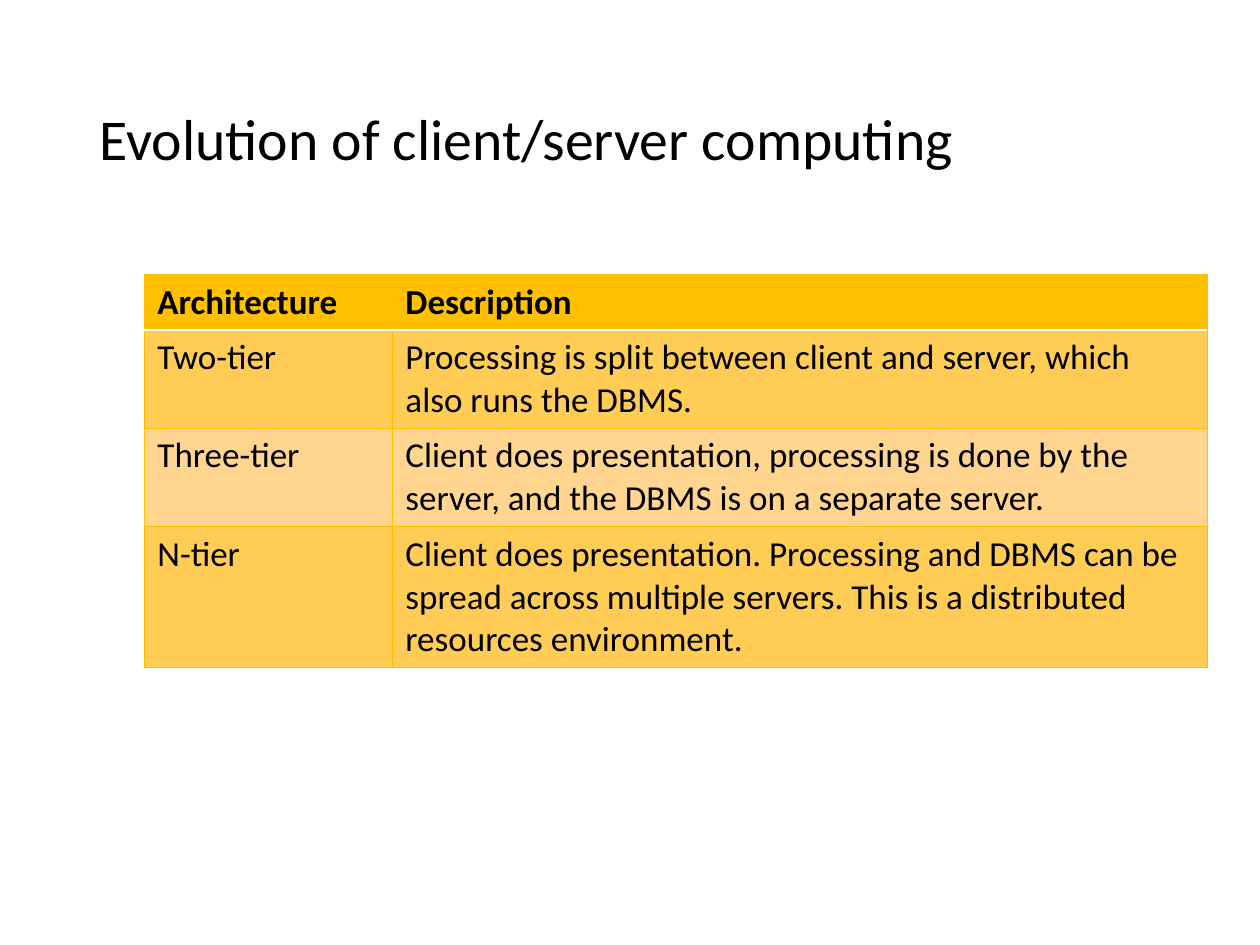
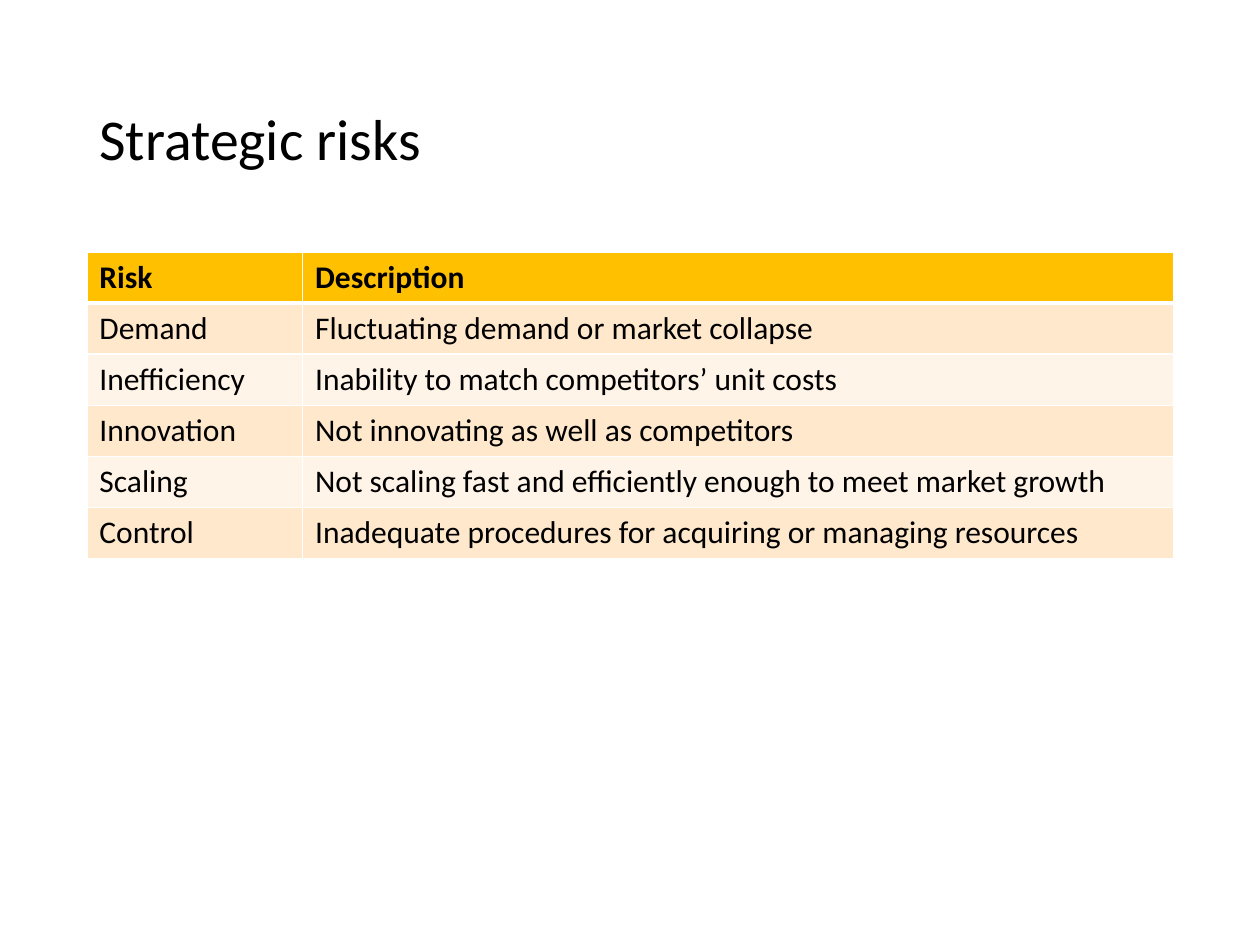
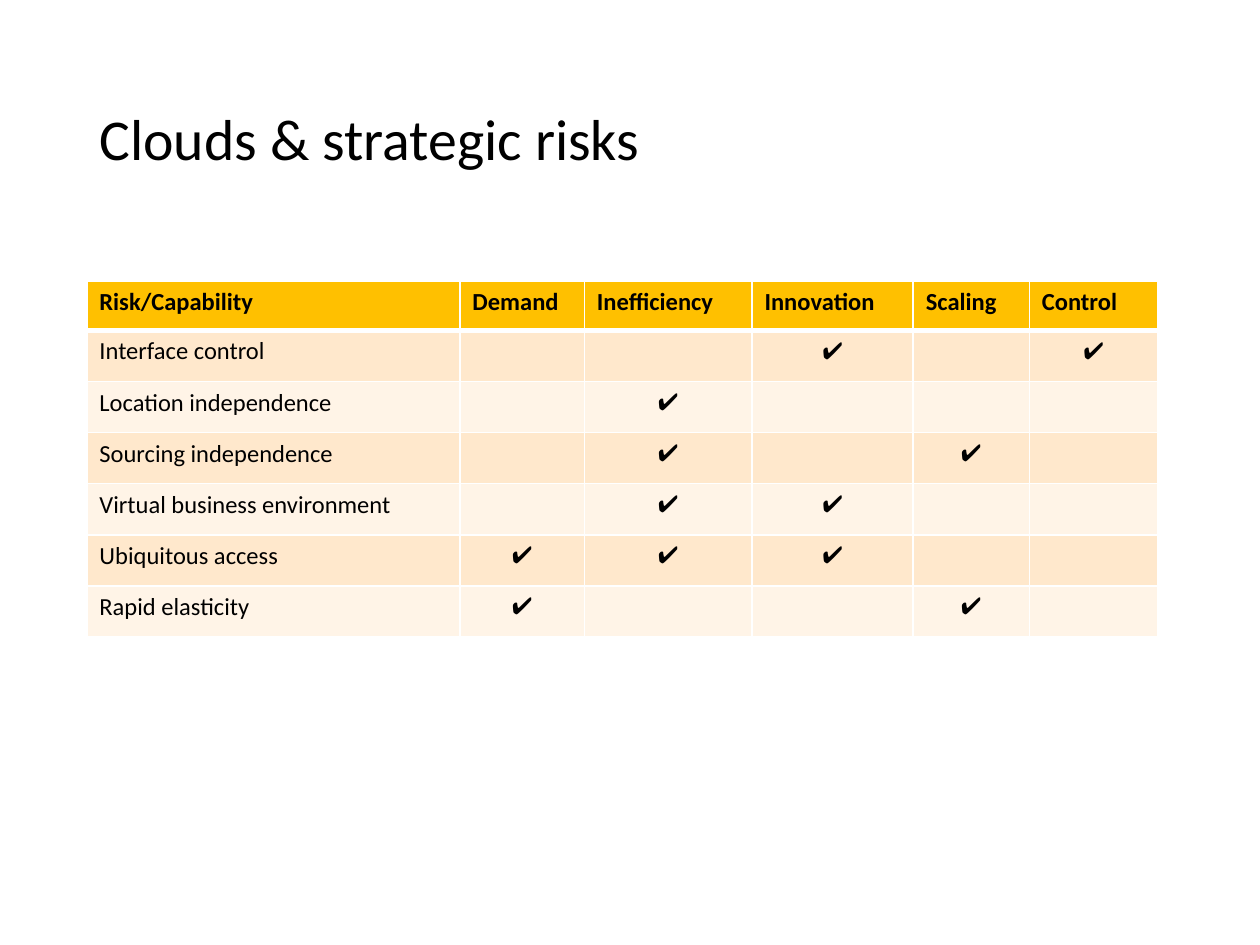
import pptx
import pptx.dml.color
import pptx.enum.text
import pptx.oxml.ns
import pptx.util
from lxml import etree

Cm = pptx.util.Cm
Pt = pptx.util.Pt
RGBColor = pptx.dml.color.RGBColor
ALIGN = pptx.enum.text.PP_ALIGN

# Shared look
FONT = "Calibri"
BLACK = RGBColor(0x00, 0x00, 0x00)
WHITE = RGBColor(0xFF, 0xFF, 0xFF)
AMBER = RGBColor(0xFF, 0xC0, 0x00)
STRONG_BANDS = (RGBColor(0xFF, 0xCD, 0x56), RGBColor(0xFF, 0xD5, 0x8F))
PALE_BANDS = (RGBColor(0xFF, 0xE8, 0xCC), RGBColor(0xFF, 0xF4, 0xE7))
# Border styles: colour and width in points
AMBER_GRID = (AMBER, 0.5)
WHITE_GRID = (WHITE, 1)
THICK_RULE = (WHITE, 3)
CHECK = "✔"
CHECK_SIZE = 13.5

# Table contents
TIERS = [
    ("Architecture", "Description"),
    ("Two-tier", "Processing is split between client and server, which also runs the DBMS."),
    ("Three-tier", "Client does presentation, processing is done by the server, "
                   "and the DBMS is on a separate server."),
    ("N-tier", "Client does presentation. Processing and DBMS can be spread across "
               "multiple servers. This is a distributed resources environment."),
]
RISKS = [
    ("Risk", "Description"),
    ("Demand", "Fluctuating demand or market collapse"),
    ("Inefficiency", "Inability to match competitors’ unit costs"),
    ("Innovation", "Not innovating as well as competitors"),
    ("Scaling", "Not scaling fast and efficiently enough to meet market growth"),
    ("Control", "Inadequate procedures for acquiring or managing resources"),
]
RISK_NAMES = [name for name, description in RISKS[1:]]
CAPABILITIES = {
    "Interface control": ("Innovation", "Control"),
    "Location independence": ("Inefficiency",),
    "Sourcing independence": ("Inefficiency", "Scaling"),
    "Virtual business environment": ("Inefficiency", "Innovation"),
    "Ubiquitous access": ("Demand", "Inefficiency", "Innovation"),
    "Rapid elasticity": ("Demand", "Scaling"),
}


def format_run(run, size, bold=False):
    run.font.name = FONT
    run.font.size = Pt(size)
    run.font.bold = bold
    run.font.color.rgb = BLACK


def add_titled_slide(presentation, title):
    slide = presentation.slides.add_slide(presentation.slide_layouts[5])
    shape = slide.shapes.title
    shape.left, shape.top, shape.width, shape.height = Cm(1.75), Cm(1.02), Cm(21.9), Cm(3.68)
    shape.text_frame.text = title
    shape.text_frame.vertical_anchor = pptx.enum.text.MSO_ANCHOR.MIDDLE
    paragraph = shape.text_frame.paragraphs[0]
    paragraph.alignment = ALIGN.LEFT
    paragraph.line_spacing = 0.9
    format_run(paragraph.runs[0], 33)
    return slide


def set_border(cell, side, style):
    colour, width = style
    properties = cell._tc.get_or_add_tcPr()
    line = etree.SubElement(properties, pptx.oxml.ns.qn("a:ln" + side), w=str(Pt(width)))
    fill = etree.SubElement(line, pptx.oxml.ns.qn("a:solidFill"))
    etree.SubElement(fill, pptx.oxml.ns.qn("a:srgbClr"), val=str(colour))


def fill_cell(cell, text, size, is_header):
    if not text:
        return
    cell.text_frame.text = text
    paragraph = cell.text_frame.paragraphs[0]
    if text == CHECK:
        paragraph.alignment = ALIGN.CENTER
        size = CHECK_SIZE
    format_run(paragraph.runs[0], size, bold=is_header)


def add_banded_table(slide, rows, left, top, widths, heights, size, bands, grid, header_rule):
    """Draw a table with an amber header row; lengths are in centimetres."""
    frame = slide.shapes.add_table(len(rows), len(widths), Cm(left), Cm(top),
                                   Cm(sum(widths)), Cm(sum(heights)))
    table = frame.table
    for column, width in zip(table.columns, widths):
        column.width = Cm(width)
    for row_index, (texts, height) in enumerate(zip(rows, heights)):
        table.rows[row_index].height = Cm(height)
        is_header = row_index == 0
        for column_index, text in enumerate(texts):
            cell = table.cell(row_index, column_index)
            fill_cell(cell, text, size, is_header)
            # Borders come before the fill in the cell properties
            for side in "LRTB":
                on_rule = (row_index, side) in ((0, "B"), (1, "T"))
                set_border(cell, side, header_rule if on_rule else grid)
            cell.fill.solid()
            cell.fill.fore_color.rgb = AMBER if is_header else bands[(row_index - 1) % 2]


def main():
    presentation = pptx.Presentation()
    presentation.slide_width, presentation.slide_height = Cm(25.4), Cm(19.05)

    # Client/server architectures
    slide = add_titled_slide(presentation, "Evolution of client/server computing")
    add_banded_table(slide, TIERS, 2.92, 5.53, [5, 16.41], [1.11, 1.98, 1.98, 2.84],
                     20, STRONG_BANDS, AMBER_GRID, WHITE_GRID)

    # Risk descriptions
    slide = add_titled_slide(presentation, "Strategic risks")
    add_banded_table(slide, RISKS, 1.75, 5.08, [4.35, 17.56], [1.03] * len(RISKS),
                     18, PALE_BANDS, WHITE_GRID, THICK_RULE)

    # Capabilities against risks
    slide = add_titled_slide(presentation, "Clouds & strategic risks")
    matrix = [["Risk/Capability"] + RISK_NAMES]
    for capability, covered in CAPABILITIES.items():
        matrix.append([capability] + [CHECK if name in covered else "" for name in RISK_NAMES])
    add_banded_table(slide, matrix, 1.75, 5.66, [7.52, 2.51, 3.38, 3.25, 2.34, 2.59],
                     [1] + [1.03] * len(CAPABILITIES), 14, PALE_BANDS, WHITE_GRID, THICK_RULE)

    presentation.save("out.pptx")


if __name__ == "__main__":
    main()
